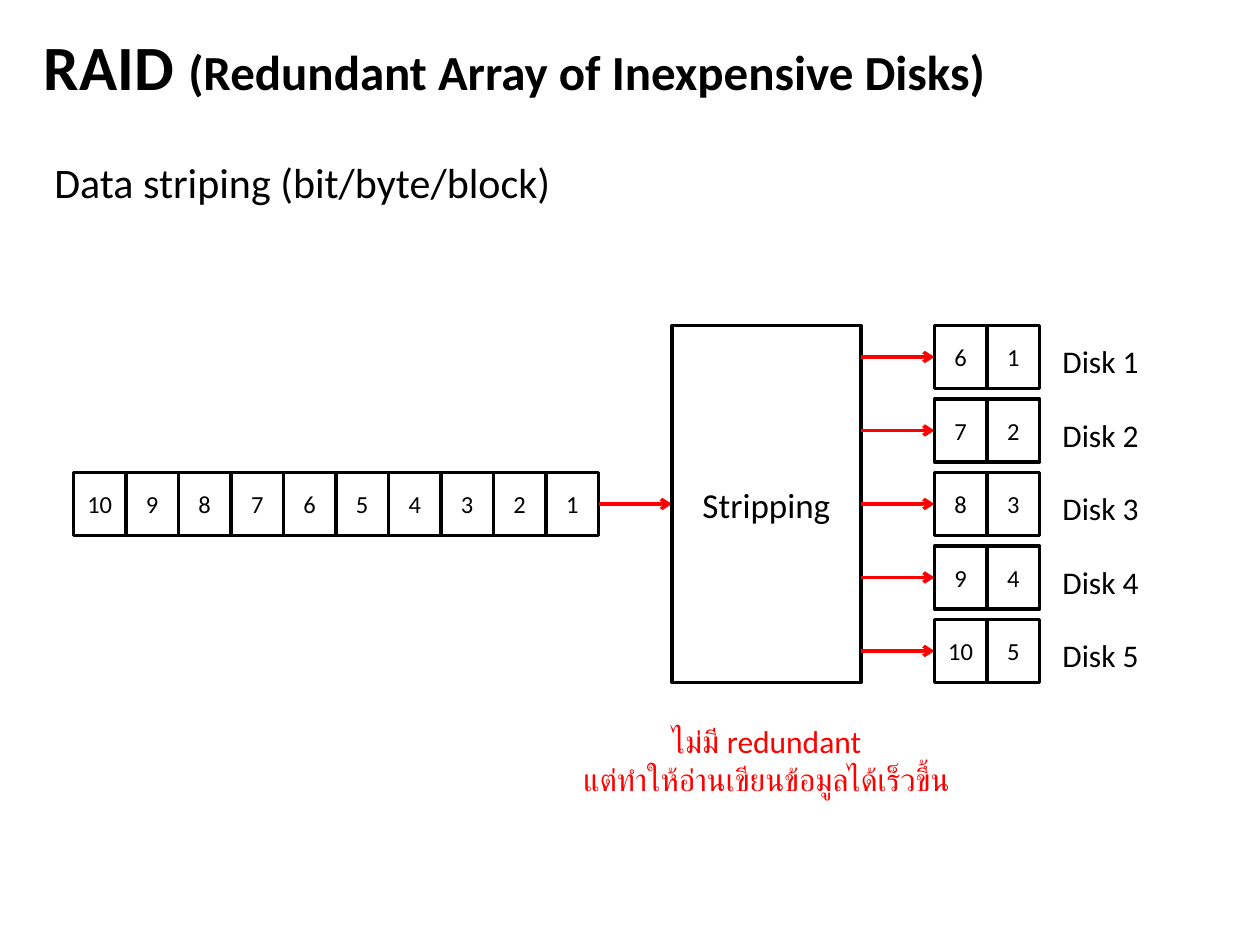
"""Build the RAID data striping slide."""
from dataclasses import dataclass

from lxml import etree
from pptx import Presentation
from pptx import util as u
from pptx.dml.color import RGBColor
from pptx.enum import shapes, text
from pptx.oxml.ns import qn

EMU_PER_PX = u.Inches(1) // 120
DISKS = 5
BLOCKS = 10
CELL_WIDTH, CELL_HEIGHT = 50, 60
ROW_TOP, ROW_PITCH = 310, 70
QUEUE_LEFT, QUEUE_TOP = 70, 450
STRIPER_LEFT, STRIPER_WIDTH, STRIPER_HEIGHT = 640, 180, 340
DISK_LEFT, LABEL_LEFT = 890, 1000


@dataclass(frozen=True)
class Theme:
    """Colours, font and type sizes of the slide."""
    font: str = "Calibri"
    ink: RGBColor = RGBColor(0, 0, 0)
    accent: RGBColor = RGBColor(255, 0, 0)
    title: int = 36
    subtitle: int = 28
    heading: int = 24
    process: int = 20
    label: int = 18
    cell: int = 14
    line: int = 2


THEME = Theme()


def px(*lengths):
    """Turn whole pixels into EMU."""
    return [u.Emu(length * EMU_PER_PX) for length in lengths]


def write(frame, content, size, color=THEME.ink, bold=False, align=text.PP_ALIGN.LEFT):
    """Append formatted text to the first paragraph of a frame."""
    para = frame.paragraphs[0]
    para.alignment = align
    for index, line in enumerate(content.split("\n")):
        if index:
            para.add_line_break()
        span = para.add_run()
        span.text = line
        span.font.name = THEME.font
        span.font.size = u.Pt(size)
        span.font.bold = bold
        span.font.color.rgb = color


def add_label(page, bounds, content, wrap=True, **style):
    """Add a text box and return its frame."""
    frame = page.shapes.add_textbox(*px(*bounds)).text_frame
    frame.word_wrap = wrap
    frame.auto_size = text.MSO_AUTO_SIZE.SHAPE_TO_FIT_TEXT
    write(frame, content, **style)
    return frame


def add_block(page, bounds, content, size):
    """Add an outlined rectangle with centred text."""
    box = page.shapes.add_shape(shapes.MSO_SHAPE.RECTANGLE, *px(*bounds))
    box.shadow.inherit = False
    box.fill.background()
    box.line.color.rgb = THEME.ink
    box.line.width = u.Pt(THEME.line)
    box.text_frame.vertical_anchor = text.MSO_ANCHOR.MIDDLE
    write(box.text_frame, content, size, align=text.PP_ALIGN.CENTER)


def add_cells(page, left, top, numbers):
    """Add a row of adjoining data cells."""
    for column, number in enumerate(numbers):
        bounds = (left + column * CELL_WIDTH, top, CELL_WIDTH, CELL_HEIGHT)
        add_block(page, bounds, str(number), THEME.cell)


def add_arrow(page, start, end, y):
    """Add a horizontal arrow."""
    arrow = page.shapes.add_connector(shapes.MSO_CONNECTOR.STRAIGHT, *px(start, y, end, y))
    arrow.line.color.rgb = THEME.accent
    arrow.line.width = u.Pt(THEME.line)
    properties = arrow.element.spPr
    etree.SubElement(properties.find(qn("a:ln")), qn("a:tailEnd"), type="arrow")
    etree.SubElement(properties, qn("a:effectLst"))


def add_disk(page, index):
    """Add one disk with its arrow, cells and label."""
    top = ROW_TOP + index * ROW_PITCH
    number = index + 1
    add_arrow(page, STRIPER_LEFT + STRIPER_WIDTH, DISK_LEFT, top + CELL_HEIGHT // 2)
    add_cells(page, DISK_LEFT, top, (number + DISKS, number))
    add_label(page, (LABEL_LEFT, top + 10, 140, 48), f"Disk {number}", size=THEME.label)


def main():
    """Build and save the slide."""
    deck = Presentation()
    deck.slide_width, deck.slide_height = px(1200, 900)
    page = deck.slides.add_slide(deck.slide_layouts[6])

    title = add_label(page, (30, 20, 1140, 85), "RAID ", size=THEME.title, bold=True)
    write(title, "(Redundant Array of Inexpensive Disks)", THEME.subtitle, bold=True)
    add_label(page, (40, 143, 578, 60), "Data striping (bit/byte/block)",
              wrap=False, size=THEME.heading)

    add_cells(page, QUEUE_LEFT, QUEUE_TOP, range(BLOCKS, 0, -1))
    add_arrow(page, QUEUE_LEFT + BLOCKS * CELL_WIDTH, STRIPER_LEFT,
              QUEUE_TOP + CELL_HEIGHT // 2)
    add_block(page, (STRIPER_LEFT, ROW_TOP, STRIPER_WIDTH, STRIPER_HEIGHT),
              "Stripping", THEME.process)
    for index in range(DISKS):
        add_disk(page, index)

    add_label(page, (510, 682, 440, 85), "ไม่มี redundant\nแต่ทำให้อ่านเขียนข้อมูลได้เร็วขึ้น",
              size=THEME.label, color=THEME.accent, align=text.PP_ALIGN.CENTER)
    deck.save("out.pptx")


if __name__ == "__main__":
    main()
